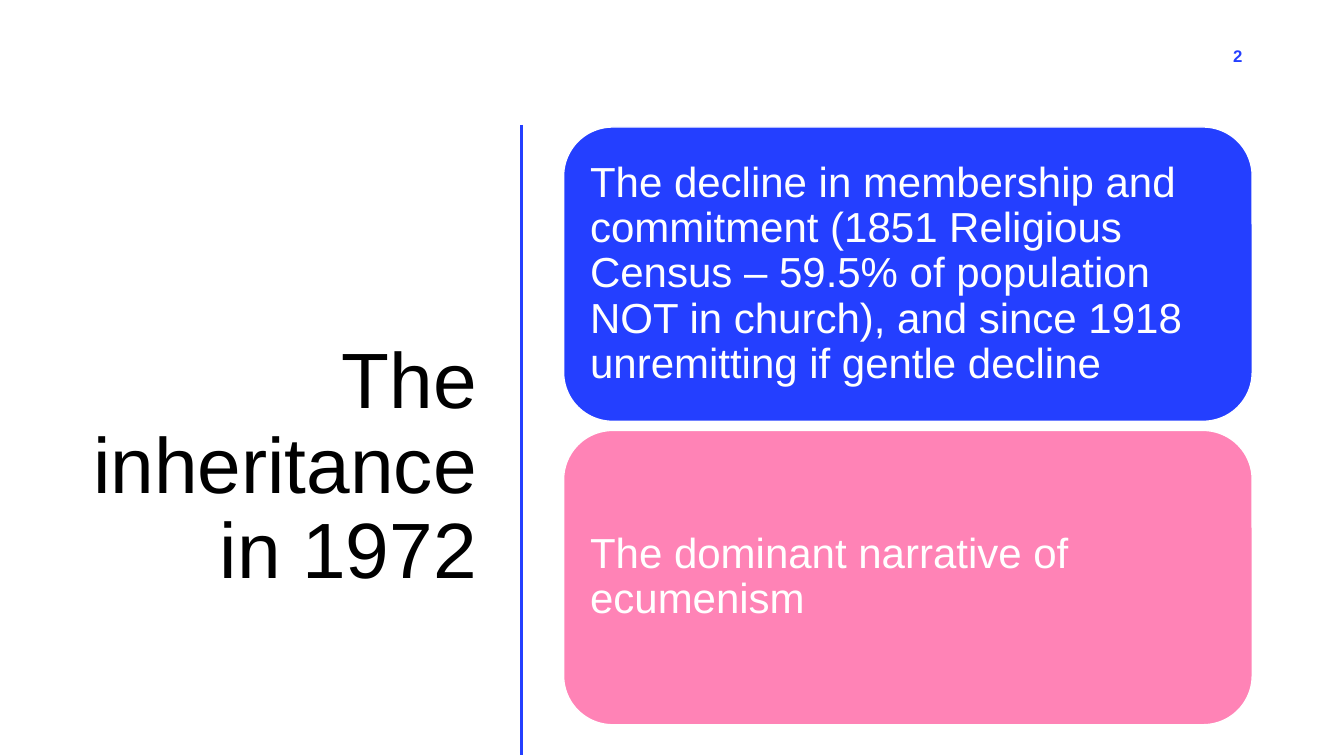
import pptx
import pptx.dml.color
import pptx.enum.shapes
import pptx.enum.text
import pptx.oxml
import pptx.util
from pptx.util import Inches

COLORS = {"blue": "243FFF", "pink": "FF83B6", "white": "FFFFFF", "black": "000000"}
FONT = "Arial"
ALIGN = pptx.enum.text.PP_ALIGN
CARDS = [
    ("The decline in membership and commitment (1851 Religious Census – 59.5% of "
     "population NOT in church), and since 1918 unremitting if gentle decline", "blue"),
    ("The dominant narrative of ecumenism", "pink"),
]


def rgb(name):
    """Return the named colour."""
    return pptx.dml.color.RGBColor.from_string(COLORS[name])


def write(sp, text, size, color, align, bold=False, spacing=0.9):
    """Fill a shape with one vertically centred paragraph and return its frame."""
    tf = sp.text_frame
    tf.word_wrap = True
    tf.vertical_anchor = pptx.enum.text.MSO_ANCHOR.MIDDLE
    p = tf.paragraphs[0]
    p.text = text
    p.alignment = align
    p.line_spacing = spacing
    p.font.name = FONT
    p.font.size = pptx.util.Pt(size)
    p.font.bold = bold
    p.font.color.rgb = rgb(color)
    return tf


def add_title(s, left, top, width, height):
    """Place the right-aligned title, set one line below the box centre."""
    sp = s.shapes.add_textbox(left, top, width, height)
    tf = write(sp, "The inheritance in 1972", 56, "black", ALIGN.RIGHT)
    tf.margin_top = Inches(0.89)


def add_page_number(s, left, top, width, height):
    """Place the slide number."""
    sp = s.shapes.add_textbox(left, top, width, height)
    write(sp, "2", 12, "blue", ALIGN.RIGHT, bold=True, spacing=1.0)


def add_divider(s, x, top, bottom):
    """Draw the vertical rule between title and cards."""
    line = s.shapes.add_connector(pptx.enum.shapes.MSO_CONNECTOR.STRAIGHT, x, top, x, bottom)
    line.line.color.rgb = rgb("blue")
    line.line.width = pptx.util.Pt(2)
    line._element.spPr.append(pptx.oxml.parse_xml(
        '<a:effectLst xmlns:a="http://schemas.openxmlformats.org/drawingml/2006/main"/>'))


def add_cards(s, left, top, width, height, gap=Inches(0.09)):
    """Stack equal rounded cards in the given box."""
    card_height = (height - gap * (len(CARDS) - 1)) // len(CARDS)
    for i, (text, color) in enumerate(CARDS):
        sp = s.shapes.add_shape(pptx.enum.shapes.MSO_SHAPE.ROUNDED_RECTANGLE,
                                left, top + i * (card_height + gap), width, card_height)
        sp.shadow.inherit = False
        sp.fill.solid()
        sp.fill.fore_color.rgb = rgb(color)
        sp.line.color.rgb = rgb("white")
        sp.line.width = pptx.util.Pt(1)
        tf = write(sp, text, 30, "white", ALIGN.LEFT)
        tf.margin_left = tf.margin_right = Inches(0.12)
        tf.margin_top = tf.margin_bottom = Inches(0.12)


def main():
    """Build and save the slide."""
    prs = pptx.Presentation()
    prs.slide_width, prs.slide_height = Inches(13.33), Inches(7.5)
    s = prs.slides.add_slide(prs.slide_layouts[6])
    add_title(s, Inches(0.52), Inches(1.17), Inches(4.31), Inches(6.11))
    add_page_number(s, Inches(9.42), Inches(0.35), Inches(3), Inches(0.4))
    add_divider(s, Inches(5.17), Inches(1.24), Inches(7.49))
    add_cards(s, Inches(5.59), Inches(1.26), Inches(6.83), Inches(5.93))
    prs.save("out.pptx")


if __name__ == "__main__":
    main()
